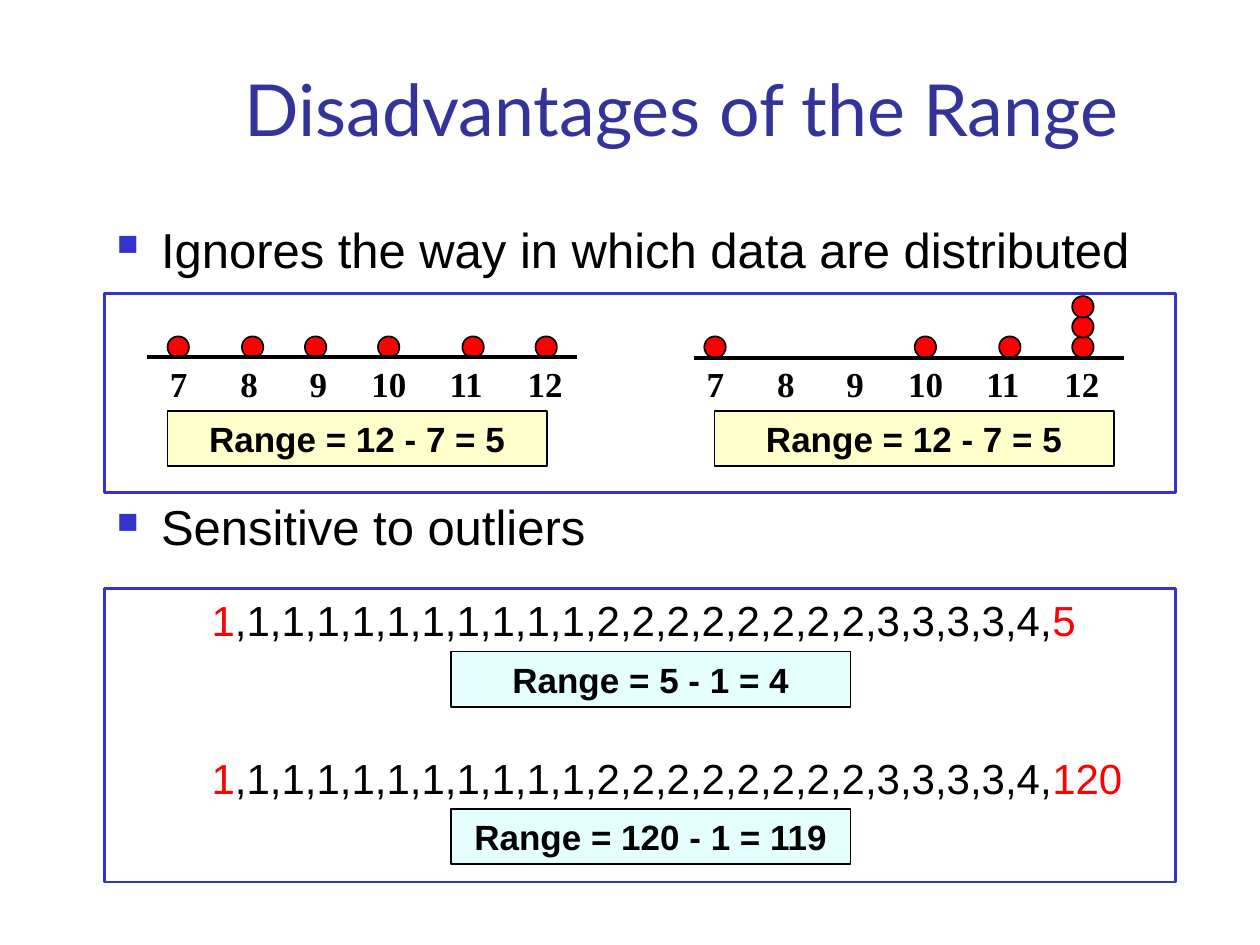
from lxml import etree
from pptx import Presentation
from pptx.dml.color import RGBColor
from pptx.enum.shapes import MSO_CONNECTOR, MSO_SHAPE
from pptx.enum.text import MSO_ANCHOR, PP_ALIGN
from pptx.oxml.ns import qn
from pptx.util import Inches, Pt

RECTANGLE, OVAL = MSO_SHAPE.RECTANGLE, MSO_SHAPE.OVAL
STRAIGHT = MSO_CONNECTOR.STRAIGHT
LEFT, CENTER = PP_ALIGN.LEFT, PP_ALIGN.CENTER
TOP, MIDDLE, BOTTOM = MSO_ANCHOR.TOP, MSO_ANCHOR.MIDDLE, MSO_ANCHOR.BOTTOM

BLACK, RED, BLUE, NAVY = "000000", "FF0000", "3333CC", "333399"
YELLOW, CYAN = "FFFFCC", "E5FFFF"
BODY, HEADING, SCALE = "Arial", "Lato", "Times New Roman"


def color(value):
    return RGBColor.from_string(value)


class SlideBuilder:
    """Holds the shared style and the page being filled."""

    def __init__(self, page):
        self.page = page

    def style(self, paragraph, size, font=BODY, fill=BLACK, bold=False, align=LEFT):
        paragraph.alignment = align
        for span in paragraph.runs:
            span.font.size = Pt(size)
            span.font.name = font
            span.font.bold = bold
            span.font.color.rgb = color(fill)

    def text(self, left, top, width, height, content, size, anchor=TOP, **style):
        box = self.page.shapes.add_textbox(
            Inches(left), Inches(top), Inches(width), Inches(height))
        frame = box.text_frame
        frame.word_wrap = True
        frame.vertical_anchor = anchor
        frame.text = content
        for paragraph in frame.paragraphs:
            self.style(paragraph, size, **style)
        return frame

    def bullets(self, left, top, width, height, items, size, gap):
        frame = self.text(left, top, width, height, "\n".join(items), size)
        for index, paragraph in enumerate(frame.paragraphs):
            if index:
                paragraph.space_before = Pt(gap)
            props = paragraph._p.get_or_add_pPr()
            props.set("marL", str(Inches(0.35)))
            props.set("indent", str(-Inches(0.35)))
            bullet_color = etree.SubElement(props, qn("a:buClr"))
            etree.SubElement(bullet_color, qn("a:srgbClr"), val=BLUE)
            etree.SubElement(props, qn("a:buSzPct"), val="60000")
            etree.SubElement(props, qn("a:buChar"), char="■")

    def shape(self, kind, left, top, width, height, fill=None, line=BLACK, weight=1):
        item = self.page.shapes.add_shape(
            kind, Inches(left), Inches(top), Inches(width), Inches(height))
        item.shadow.inherit = False
        if fill:
            item.fill.solid()
            item.fill.fore_color.rgb = color(fill)
        else:
            item.fill.background()
        item.line.color.rgb = color(line)
        item.line.width = Pt(weight)
        return item

    def result(self, left, top, width, content, fill):
        frame = self.shape(RECTANGLE, left, top, width, 0.44, fill).text_frame
        frame.word_wrap = True
        frame.vertical_anchor = MIDDLE
        frame.text = content
        self.style(frame.paragraphs[0], 20, bold=True, align=CENTER)

    def axis(self, left, top, width):
        line = self.page.shapes.add_connector(
            STRAIGHT, Inches(left), Inches(top), Inches(left + width), Inches(top))
        line.line.color.rgb = color(BLACK)
        line.line.width = Pt(2.25)
        etree.SubElement(line._element.spPr, qn("a:effectLst"))

    def scale_labels(self, left, top, values, stops):
        frame = self.text(left, top, 3.34, 0.43, "\t".join(map(str, values)), 20,
                          font=SCALE, bold=True)
        props = frame.paragraphs[0]._p.get_or_add_pPr()
        tabs = etree.SubElement(props, qn("a:tabLst"))
        for stop in stops:
            etree.SubElement(tabs, qn("a:tab"), pos=str(Inches(stop)), algn="l")

    def data_row(self, top, first, middle, last):
        frame = self.text(0.58, top, 9, 0.5, first, 24, fill=RED)
        frame.margin_left = Inches(1.1)
        paragraph = frame.paragraphs[0]
        for content in (middle, last):
            paragraph.add_run().text = content
        self.style(paragraph, 24, fill=RED)
        paragraph.runs[1].font.color.rgb = color(BLACK)


# Positions on the dot plots, shared by both plots
DOT_LEFT = {7: 1.33, 8: 1.92, 9: 2.42, 10: 3, 11: 3.67, 12: 4.25}
LABEL_STOPS = (0.56, 1.11, 1.6, 2.22, 2.84)
DOT_SIZE, STACK_STEP = 0.17, 0.16

# Shift, axis left, axis top, result left, result width, dots per value
PLOTS = (
    (0, 1.17, 2.83, 1.33, 3.01, {value: 1 for value in DOT_LEFT}),
    (4.26, 5.51, 2.84, 5.67, 3.17, {7: 1, 10: 1, 11: 1, 12: 3}),
)

SERIES = ",".join(["", *"1" * 10, *"2" * 8, *"3" * 4, "4", ""])
OUTLIERS = (
    (4.67, "5", "Range = 5 - 1 = 4"),
    (5.92, "120", "Range = 120 - 1 = 119"),
)


def main():
    deck = Presentation()
    deck.slide_width, deck.slide_height = Inches(10), Inches(7.5)
    slide = SlideBuilder(deck.slides.add_slide(deck.slide_layouts[6]))

    # Title and bullet points
    slide.text(1.15, 0.42, 8.52, 0.83, "Disadvantages of the Range", 41,
               anchor=BOTTOM, font=HEADING, fill=NAVY, align=CENTER)
    slide.bullets(0.83, 1.69, 8.83, 4.5,
                  ("Ignores the way in which data are distributed",
                   "Sensitive to outliers"), 28, gap=125)

    # Dot plots with the same range
    for shift, axis_left, axis_top, result_left, result_width, counts in PLOTS:
        for value, count in counts.items():
            for level in range(count):
                slide.shape(OVAL, DOT_LEFT[value] + shift, 2.67 - level * STACK_STEP,
                            DOT_SIZE, DOT_SIZE, RED)
        slide.axis(axis_left, axis_top, 3.41)
        slide.scale_labels(1.25 + shift, 2.83, DOT_LEFT, LABEL_STOPS)
        slide.result(result_left, 3.26, result_width, "Range = 12 - 7 = 5", YELLOW)

    # Data rows with and without an outlier
    for top, last, result in OUTLIERS:
        slide.data_row(top, "1", SERIES, last)
        slide.result(3.58, top + 0.5, 3.17, result, CYAN)

    # Frames around the two examples
    for top, height in ((2.33, 1.58), (4.67, 2.33)):
        slide.shape(RECTANGLE, 0.83, top, 8.5, height, line=BLUE, weight=1.5)

    deck.save("out.pptx")


if __name__ == "__main__":
    main()
